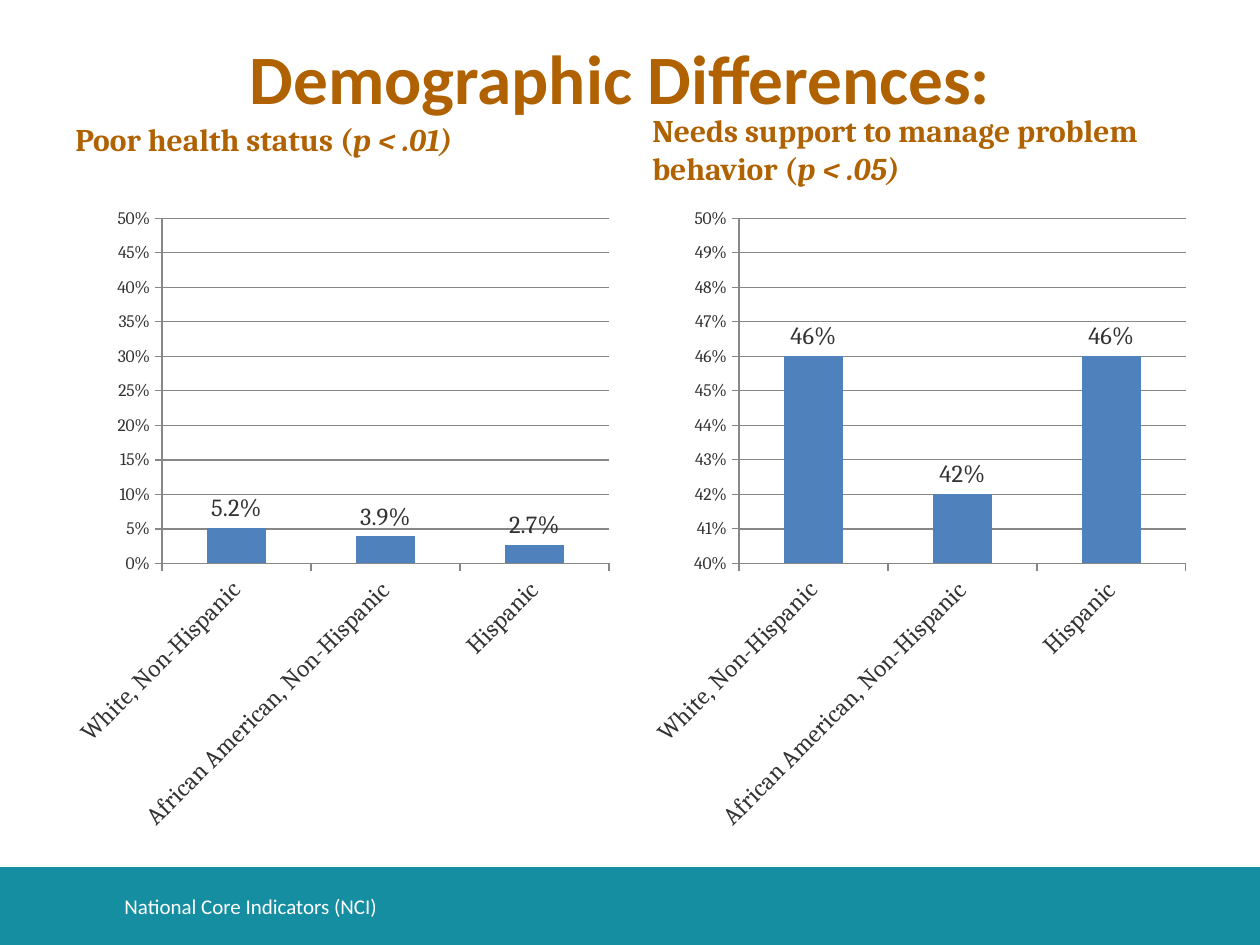
from pptx import Presentation
from pptx.chart.data import CategoryChartData
from pptx.dml.color import RGBColor
from pptx.enum.chart import XL_CHART_TYPE as ChartType, XL_LABEL_POSITION as LabelPosition, XL_TICK_MARK as Tick
from pptx.enum.shapes import MSO_SHAPE as Shape
from pptx.enum.text import MSO_ANCHOR as Anchor, PP_ALIGN as Align
from pptx.util import Cm, Pt

TITLE = "Demographic Differences:"
FOOTER = "National Core Indicators (NCI)"
GROUPS = ["White, Non-Hispanic", "African American, Non-Hispanic", "Hispanic"]
PANELS = [
    {"heading": "Poor health status (", "test": "p < .01)", "heading_height": 1.19,
     "values": [0.052, 0.039, 0.027], "label_format": "0.0%", "low": 0, "step": 0.05},
    {"heading": "Needs support to manage problem behavior (", "test": "p < .05)", "heading_height": 1.78,
     "values": [0.46, 0.42, 0.46], "label_format": "0%", "low": 0.4, "step": 0.01},
]
BROWN, TEAL, WHITE, BLUE, DARK, GRAY = "B06100", "168EA2", "FFFFFF", "4F81BD", "333333", "878787"
MARGIN, PANEL_WIDTH, PANEL_STEP = 1.27, 11.23, 11.63
HEADING_TOP, CHART_TOP, CHART_HEIGHT = 2.11, 3.94, 13.08


def color(value):
    return RGBColor.from_string(value)


def style(font, size, name, shade, bold=False, italic=False):
    font.size, font.name, font.bold, font.italic = Pt(size), name, bold, italic
    font.color.rgb = color(shade)


def add_text(page, area, runs, anchor, align=Align.LEFT, spacing=1.0):
    box = page.shapes.add_textbox(*map(Cm, area))
    frame = box.text_frame
    frame.word_wrap = True
    frame.vertical_anchor = anchor
    para = frame.paragraphs[0]
    para.alignment, para.line_spacing = align, spacing
    for text, *look in runs:
        span = para.add_run()
        span.text = text
        style(span.font, *look)


def add_bar_chart(page, left, panel):
    data = CategoryChartData(number_format=panel["label_format"])
    data.categories = GROUPS
    data.add_series("Series 1", panel["values"])
    area = map(Cm, (left, CHART_TOP, PANEL_WIDTH, CHART_HEIGHT))
    chart = page.shapes.add_chart(ChartType.COLUMN_CLUSTERED, *area, data).chart
    chart.has_legend = chart.has_title = False
    style(chart.font, 10, "Cambria", DARK)

    plot = chart.plots[0]
    plot.gap_width = 150
    plot.vary_by_categories = False
    fill = plot.series[0].format.fill
    fill.solid()
    fill.fore_color.rgb = color(BLUE)
    plot.has_data_labels = True
    labels = plot.data_labels
    labels.show_value = True
    labels.number_format, labels.number_format_is_linked = panel["label_format"], False
    labels.position = LabelPosition.OUTSIDE_END
    style(labels.font, 14, "Cambria", DARK)

    scale, groups = chart.value_axis, chart.category_axis
    scale.minimum_scale, scale.maximum_scale, scale.major_unit = panel["low"], 0.5, panel["step"]
    scale.has_major_gridlines = True
    scale.tick_labels.number_format, scale.tick_labels.number_format_is_linked = "0%", False
    for axis, size in ((scale, 10), (groups, 14)):
        axis.major_tick_mark, axis.minor_tick_mark = Tick.OUTSIDE, Tick.NONE
        style(axis.tick_labels.font, size, "Cambria", DARK)
    for line in (scale.format.line, groups.format.line, scale.major_gridlines.format.line):
        line.color.rgb = color(GRAY)
        line.width = Pt(0.75)
    groups._element.txPr.bodyPr.set("rot", "-2700000")


deck = Presentation()
deck.slide_width, deck.slide_height = Cm(25.4), Cm(19.05)
page = deck.slides.add_slide(deck.slide_layouts[6])

band = page.shapes.add_shape(Shape.RECTANGLE, 0, Cm(17.48), Cm(25.4), Cm(1.57))
band.shadow.inherit = False
band.fill.solid()
band.fill.fore_color.rgb = color(TEAL)
band.line.fill.background()

for index, panel in enumerate(PANELS):
    left = MARGIN + index * PANEL_STEP
    runs = [(panel["heading"], 18, "Cambria", BROWN, True),
            (panel["test"], 18, "Cambria", BROWN, True, True)]
    add_text(page, (left, HEADING_TOP, PANEL_WIDTH, panel["heading_height"]), runs, Anchor.BOTTOM)
    add_bar_chart(page, left, panel)

add_text(page, (2.26, 17.75, 18.8, 1.02), [(FOOTER, 12, "Calibri", WHITE)], Anchor.MIDDLE)
add_text(page, (1.07, 0.76, 22.86, 1.8), [(TITLE, 39.6, "Calibri", BROWN, True)],
         Anchor.MIDDLE, Align.CENTER, 0.9)

deck.save("out.pptx")
